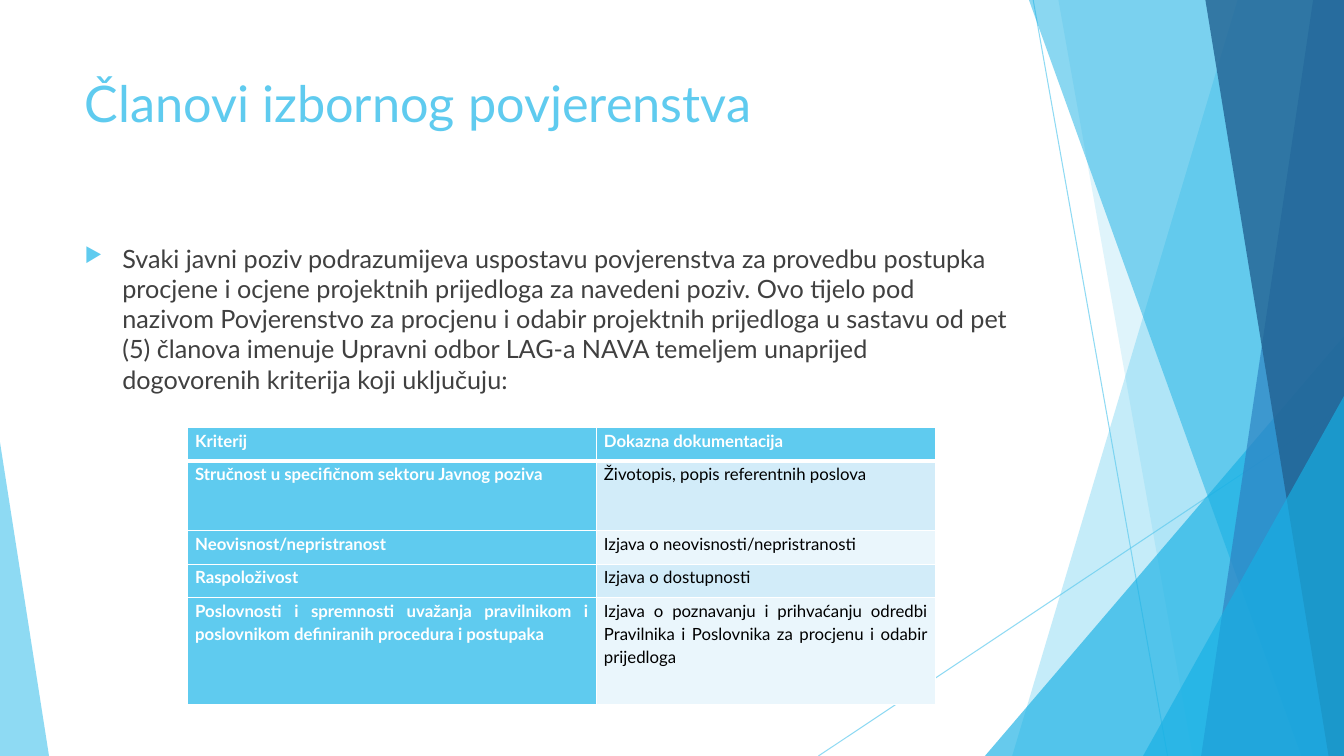
from lxml.etree import SubElement as add_node
from pptx import Presentation
from pptx.dml.color import RGBColor as Rgb
from pptx.enum.shapes import MSO_CONNECTOR as Connector, MSO_SHAPE as Shape
from pptx.enum.text import MSO_ANCHOR as Anchor, MSO_AUTO_SIZE as AutoSize, PP_ALIGN as Align
from pptx.oxml.ns import qn
from pptx.util import Pt

COLORS = {
    "sky": "5FCBEF", "cyan": "17B0E4", "blue": "2E83C3", "navy": "226292",
    "text": "404040", "black": "000000", "white": "FFFFFF",
    "band_dark": "D2ECF9", "band_light": "EAF6FC",
}
WIDTH, HEIGHT = 960, 540

LINES = [((738, 0), (834, HEIGHT)), ((WIDTH, 290), (584.6, HEIGHT))]
RIBBONS = [
    (884, 723, "sky", 36),
    (756, 852, "sky", 20),
    ((703.5, 240, 256.5, 300), 1, "cyan", 66),
    (735, 929.5, "cyan", 50),
    (938, 858, "blue", 70),
    (861, 949, "navy", 80),
    ((816.5, 283, 143.5, 257), 1, "cyan", 66),
    ((0, 316, 35, 224), 0, "sky", 70),
]
TITLE = "Članovi izbornog povjerenstva"
BODY = (
    "Svaki javni poziv podrazumijeva uspostavu povjerenstva za provedbu postupka "
    "procjene i ocjene projektnih prijedloga za navedeni poziv. Ovo tijelo pod nazivom "
    "Povjerenstvo za procjenu i odabir projektnih prijedloga u sastavu od pet (5) članova "
    "imenuje Upravni odbor LAG-a NAVA temeljem unaprijed dogovorenih kriterija koji uključuju:"
)
CRITERIA = [
    ("Kriterij", "Dokazna dokumentacija"),
    ("Stručnost u specifičnom sektoru Javnog poziva", "Životopis, popis referentnih poslova"),
    ("Neovisnost/nepristranost", "Izjava o neovisnosti/nepristranosti"),
    ("Raspoloživost", "Izjava o dostupnosti"),
    ("Poslovnosti i spremnosti uvažanja pravilnikom i poslovnikom definiranih procedura i postupaka",
     "Izjava o poznavanju i prihvaćanju odredbi Pravilnika i Poslovnika za procjenu i odabir prijedloga"),
]
COLUMN_WIDTHS = [292, 242]
ROW_HEIGHTS = [24, 49.5, 24, 24, 76.3]


class SlideBuilder:
    """Hold the text style and the current slide, and add elements to it."""

    def __init__(self, page, font="Lato"):
        """Keep the slide and the font."""
        self.page = page
        self.font = font

    def set_alpha(self, shape, percent):
        """Make the colour of a shape or line partly transparent."""
        for color in shape.element.spPr.iter(qn("a:srgbClr")):
            add_node(color, qn("a:alpha"), val=str(percent * 1000))

    def paint(self, shape, color, alpha):
        """Fill a shape without outline or shadow."""
        shape.shadow.inherit = False
        shape.fill.solid()
        shape.fill.fore_color.rgb = Rgb.from_string(COLORS[color])
        shape.line.fill.background()
        self.set_alpha(shape, alpha)

    def line(self, start, end):
        """Draw a thin translucent line."""
        line = self.page.shapes.add_connector(
            Connector.STRAIGHT, *(Pt(value) for value in (*start, *end)))
        line.line.width = Pt(0.75)
        line.line.color.rgb = Rgb.from_string(COLORS["sky"])
        self.set_alpha(line, 70)
        add_node(line.element.spPr, qn("a:effectLst"))

    def ribbon(self, top_x, bottom_x, color, alpha):
        """Draw a full-height band from a slanted edge to the right side."""
        builder = self.page.shapes.build_freeform(Pt(top_x), Pt(0))
        corners = [(WIDTH, 0), (WIDTH, HEIGHT), (bottom_x, HEIGHT)]
        builder.add_line_segments([(Pt(x), Pt(y)) for x, y in corners])
        self.paint(builder.convert_to_shape(), color, alpha)

    def triangle(self, bounds, apex, color, alpha):
        """Draw a triangle whose apex lies at a share of its width."""
        shape = self.page.shapes.add_shape(Shape.ISOSCELES_TRIANGLE, *map(Pt, bounds))
        shape.adjustments[0] = apex
        self.paint(shape, color, alpha)

    def span(self, para, text, size, color, bold=False):
        """Add one formatted run."""
        span = para.add_run()
        span.text = text
        span.font.name = self.font
        span.font.size = Pt(size)
        span.font.bold = bold
        span.font.color.rgb = Rgb.from_string(COLORS[color])

    def title(self, text, bounds):
        """Place and format the title placeholder."""
        box = self.page.shapes.title
        box.left, box.top, box.width, box.height = map(Pt, bounds)
        frame = box.text_frame
        frame.word_wrap = True
        frame.auto_size = AutoSize.NONE
        frame.vertical_anchor = Anchor.TOP
        para = frame.paragraphs[0]
        para.alignment = Align.LEFT
        self.span(para, text, 36, "sky")

    def bullet_text(self, text, bounds):
        """Add a text box with one bulleted paragraph."""
        frame = self.page.shapes.add_textbox(*map(Pt, bounds)).text_frame
        frame.word_wrap = True
        para = frame.paragraphs[0]
        para.space_before = Pt(10)
        self.span(para, text, 18, "text")
        props = para._p.get_or_add_pPr()
        props.set("marL", str(Pt(27)))
        props.set("indent", str(-Pt(27)))
        bullet_color = add_node(props, qn("a:buClr"))
        add_node(bullet_color, qn("a:srgbClr"), val=COLORS["sky"])
        add_node(props, qn("a:buSzPct"), val="80000")
        add_node(props, qn("a:buChar"), char="▶")

    def borders(self, cell, top, bottom):
        """Give a cell white borders with the given top and bottom widths."""
        props = cell._tc.get_or_add_tcPr()
        for side, width in (("L", 1), ("R", 1), ("T", top), ("B", bottom)):
            edge = add_node(props, qn(f"a:ln{side}"), w=str(Pt(width)))
            fill = add_node(edge, qn("a:solidFill"))
            add_node(fill, qn("a:srgbClr"), val=COLORS["white"])

    def cell(self, cell, text, row, column):
        """Fill and format one table cell."""
        heading = row == 0 or column == 0
        band = "band_dark" if row % 2 else "band_light"
        self.borders(cell, 3 if row == 1 else 1, 3 if row == 0 else 1)
        cell.fill.solid()
        cell.fill.fore_color.rgb = Rgb.from_string(COLORS["sky" if heading else band])
        cell.margin_left = cell.margin_right = Pt(5.4)
        cell.margin_top = cell.margin_bottom = Pt(0)
        para = cell.text_frame.paragraphs[0]
        para.alignment = Align.JUSTIFY
        para.line_spacing = 1.15
        para.space_after = Pt(10)
        self.span(para, text, 12, "white" if heading else "black", heading)

    def table(self, rows, left, top):
        """Add the criteria table."""
        table = self.page.shapes.add_table(
            len(rows), len(COLUMN_WIDTHS), Pt(left), Pt(top),
            Pt(sum(COLUMN_WIDTHS)), Pt(sum(ROW_HEIGHTS))).table
        for column, width in zip(table.columns, COLUMN_WIDTHS):
            column.width = Pt(width)
        for row, height in zip(table.rows, ROW_HEIGHTS):
            row.height = Pt(height)
        for row, texts in enumerate(rows):
            for column, text in enumerate(texts):
                self.cell(table.cell(row, column), text, row, column)


def main():
    """Build and save the slide."""
    deck = Presentation()
    deck.slide_width, deck.slide_height = Pt(WIDTH), Pt(HEIGHT)
    slide = SlideBuilder(deck.slides.add_slide(deck.slide_layouts[5]))
    for start, end in LINES:
        slide.line(start, end)
    for first, second, color, alpha in RIBBONS:
        draw = slide.triangle if isinstance(first, tuple) else slide.ribbon
        draw(first, second, color, alpha)
    slide.title(TITLE, (53.3, 48, 677, 104))
    slide.bullet_text(BODY, (53.3, 170, 677, 305))
    slide.table(CRITERIA, 134, 305.5)
    deck.save("out.pptx")


if __name__ == "__main__":
    main()
